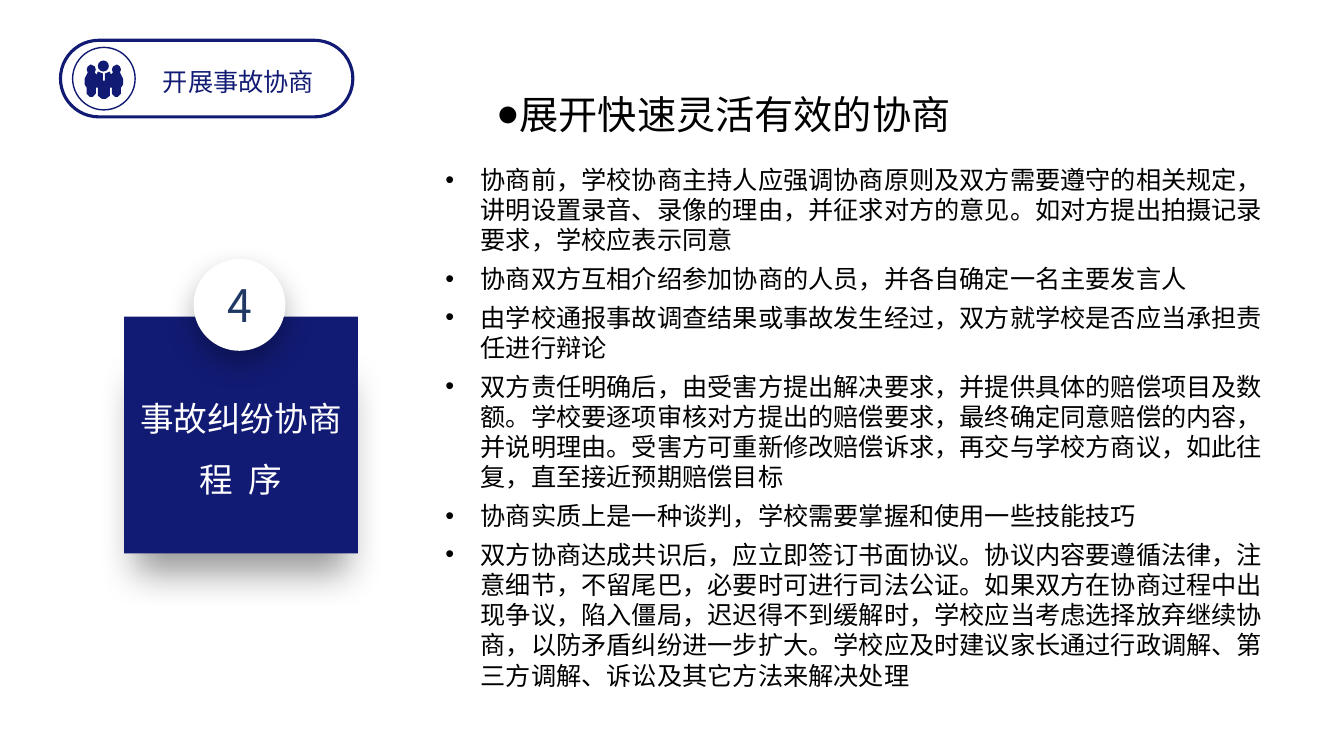
"""Builds the slide on negotiating after a school accident."""
from lxml import etree
from pptx import Presentation
from pptx.dml.color import RGBColor
from pptx.enum.shapes import MSO_SHAPE
from pptx.enum.text import MSO_ANCHOR, MSO_AUTO_SIZE, PP_ALIGN
from pptx.oxml.ns import qn
from pptx.util import Emu, Inches, Pt

OVAL, ROUND = MSO_SHAPE.OVAL, MSO_SHAPE.ROUNDED_RECTANGLE
LEFT, CENTER = PP_ALIGN.LEFT, PP_ALIGN.CENTER
TOP, MIDDLE = MSO_ANCHOR.TOP, MSO_ANCHOR.MIDDLE
FIT, NO_FIT = MSO_AUTO_SIZE.SHAPE_TO_FIT_TEXT, MSO_AUTO_SIZE.NONE
FONT = "Noto Sans CJK SC"
LINE_HEIGHT = 1.2
COLORS = {"navy": "121B74", "number": "203864", "white": "FFFFFF", "black": "000000"}

TITLE = "展开快速灵活有效的协商"
SECTION = "开展事故协商"
NUMBER = "4"
CARD_LABEL = "事故纠纷协商程  序"
STEPS = [
    "协商前，学校协商主持人应强调协商原则及双方需要遵守的相关规定，讲明设置录音、录像的理由，并征求对方的意见。如对方提出拍摄记录要求，学校应表示同意",
    "协商双方互相介绍参加协商的人员，并各自确定一名主要发言人",
    "由学校通报事故调查结果或事故发生经过，双方就学校是否应当承担责任进行辩论",
    "双方责任明确后，由受害方提出解决要求，并提供具体的赔偿项目及数额。学校要逐项审核对方提出的赔偿要求，最终确定同意赔偿的内容，并说明理由。受害方可重新修改赔偿诉求，再交与学校方商议，如此往复，直至接近预期赔偿目标",
    "协商实质上是一种谈判，学校需要掌握和使用一些技能技巧",
    "双方协商达成共识后，应立即签订书面协议。协议内容要遵循法律，注意细节，不留尾巴，必要时可进行司法公证。如果双方在协商过程中出现争议，陷入僵局，迟迟得不到缓解时，学校应当考虑选择放弃继续协商，以防矛盾纠纷进一步扩大。学校应及时建议家长通过行政调解、第三方调解、诉讼及其它方法来解决处理",
]

PEOPLE_AXIS = 1.03
PEOPLE_LEFT = [
    (1.02, 0.8), (1.02, 0.73), (0.97, 0.71), (0.96, 0.74), (0.94, 0.72),
    (0.95, 0.69), (0.94, 0.66), (0.9, 0.64), (0.87, 0.66), (0.86, 0.69),
    (0.87, 0.72), (0.84, 0.78), (0.84, 0.84), (0.86, 0.87), (0.86, 0.93),
    (0.89, 0.96), (0.92, 0.96), (0.95, 0.93), (0.95, 0.87), (0.97, 0.87),
    (0.97, 0.95), (1.01, 0.98),
]


def rgb(name):
    return RGBColor.from_string(COLORS[name])


def paint(sp, fill=None, line=None, width=1):
    sp.shadow.inherit = False
    if fill:
        sp.fill.solid()
        sp.fill.fore_color.rgb = rgb(fill)
    else:
        sp.fill.background()
    if line:
        sp.line.color.rgb = rgb(line)
        sp.line.width = Pt(width)
    else:
        sp.line.fill.background()


def add_shape(parent, kind, box, **style):
    sp = parent.shapes.add_shape(kind, *map(Inches, box))
    paint(sp, **style)
    return sp


def add_shadow(sp, alpha, blur, dist, sx=100, sy=100):
    effects = sp._element.spPr.find(qn("a:effectLst"))
    shadow = etree.SubElement(effects, qn("a:outerShdw"), blurRad=str(Pt(blur)),
                              dist=str(Pt(dist)), dir="5400000", sx=str(sx * 1000),
                              sy=str(sy * 1000), algn="ctr", rotWithShape="0")
    color = etree.SubElement(shadow, qn("a:srgbClr"), val=COLORS["black"])
    etree.SubElement(color, qn("a:alpha"), val=str(alpha * 1000))


def write(sp, lines, size, color, align=CENTER, anchor=TOP, spacing=1, before=0,
          bullet=None, indent=(0, 0), fit=FIT, insets=(0.1, 0.05)):
    tf = sp.text_frame
    tf.text = "\n".join(lines)
    tf.word_wrap = True
    tf.vertical_anchor = anchor
    tf.auto_size = fit
    tf.margin_left = tf.margin_right = Inches(insets[0])
    tf.margin_top = tf.margin_bottom = Inches(insets[1])
    for p in tf.paragraphs:
        p.alignment = align
        p.line_spacing = Pt(size * LINE_HEIGHT * spacing)
        p.space_before = Pt(before)
        if bullet:
            pPr = p._p.get_or_add_pPr()
            pPr.set("marL", str(Inches(indent[0])))
            pPr.set("indent", str(Inches(indent[1])))
            etree.SubElement(pPr, qn("a:buFont"), typeface="Arial")
            etree.SubElement(pPr, qn("a:buChar"), char=bullet)
        for r in p.runs:
            r.font.size = Pt(size)
            r.font.color.rgb = rgb(color)
            r.font.name = FONT
            etree.SubElement(r._r.get_or_add_rPr(), qn("a:ea"), typeface=FONT)


def add_text(parent, box, lines, size, color, **style):
    write(parent.shapes.add_textbox(*map(Inches, box)), lines, size, color, **style)


def add_people(parent):
    right = [(2 * PEOPLE_AXIS - x, y) for x, y in reversed(PEOPLE_LEFT)]
    points = [(Inches(x), Inches(y)) for x, y in PEOPLE_LEFT + right]
    builder = parent.shapes.build_freeform(*points[0], scale=1.0)
    builder.add_line_segments(points[1:], close=True)
    paint(builder.convert_to_shape(Emu(0), Emu(0)), fill="navy")


def add_card(s):
    card = s.shapes.add_group_shape()
    square = add_shape(card, ROUND, (1.23, 3.14, 2.32, 2.35), fill="navy")
    square.adjustments[0] = 0
    add_shadow(square, 40, 27, 31, sx=90, sy=80)
    badge = add_shape(card, OVAL, (1.92, 2.57, 0.91, 0.91), fill="white")
    add_shadow(badge, 30, 21, 9)
    write(badge, [NUMBER], 32, "number", anchor=MIDDLE, fit=NO_FIT, insets=(0.13, 0.07))
    add_text(card, (1.25, 3.75, 2.28, 1.21), [CARD_LABEL], 24, "white",
             spacing=1.5, insets=(0, 0))


def add_section_tag(s):
    tag = s.shapes.add_group_shape()
    pill = add_shape(tag, ROUND, (0.6, 0.4, 2.9, 0.76), line="navy", width=2.25)
    pill.adjustments[0] = 0.5
    add_shape(tag, OVAL, (0.72, 0.47, 0.62, 0.62), fill="white", line="navy")
    add_shape(tag, OVAL, (0.97, 0.6, 0.11, 0.11), fill="navy")
    add_people(tag)
    add_text(tag, (1.36, 0.61, 2.01, 0.4), [SECTION], 18, "navy")


def main():
    prs = Presentation()
    prs.slide_width, prs.slide_height = Inches(13.33), Inches(7.5)
    s = prs.slides.add_slide(prs.slide_layouts[5])
    add_card(s)
    add_section_tag(s)
    title = s.shapes.title
    title.left, title.top, title.width, title.height = map(Inches, (4.19, 0.84, 5.36, 0.57))
    write(title, [TITLE], 28, "black", align=LEFT, anchor=MIDDLE,
          bullet="●", indent=(0, 0.63))
    add_text(s, (4.32, 1.58, 8.3, 5.37), STEPS, 18, "black", align=LEFT,
             before=6, bullet="•", indent=(0.35, -0.35))
    prs.save("out.pptx")


if __name__ == "__main__":
    main()
